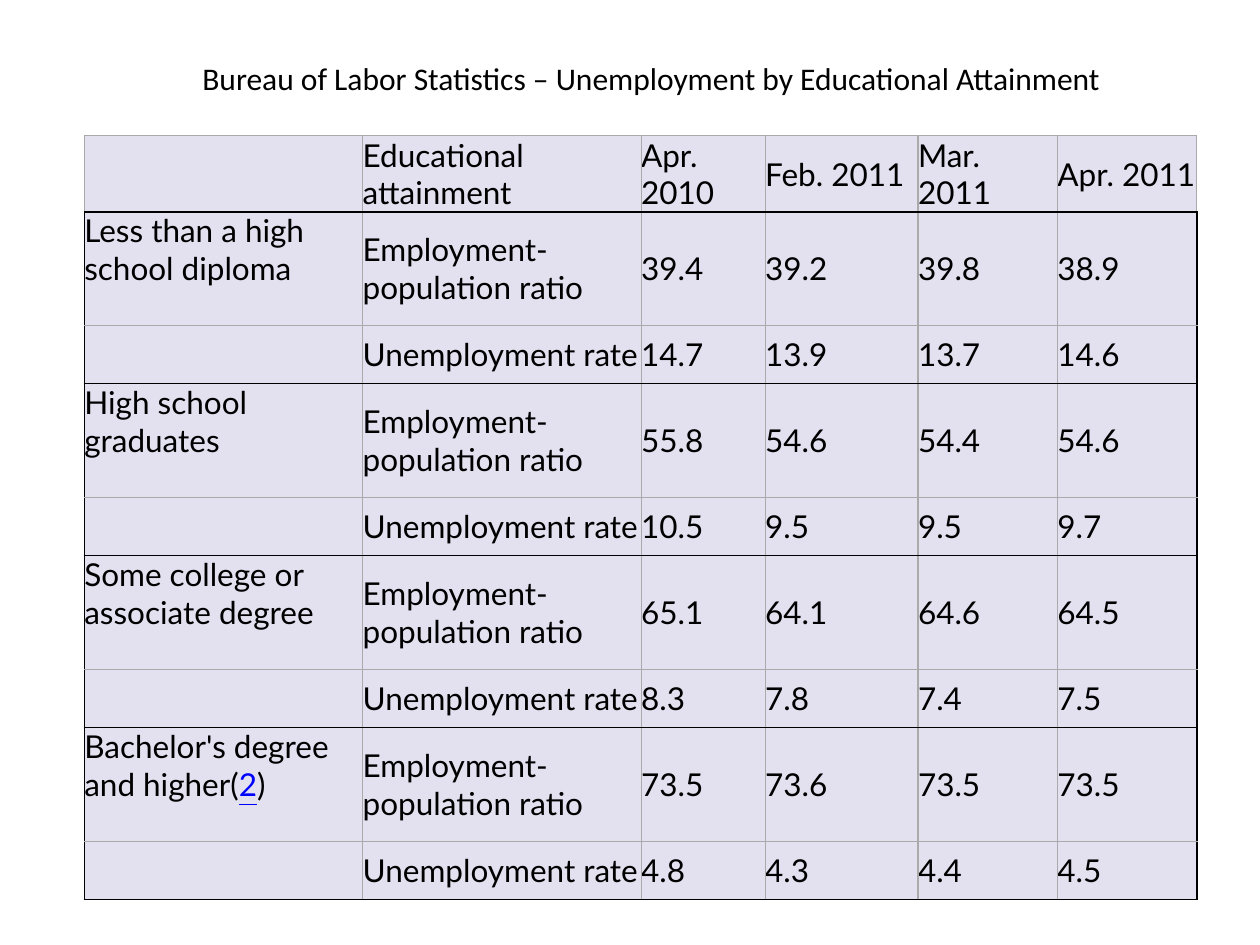
import lxml.etree
import pptx
import pptx.dml.color
import pptx.enum.text
import pptx.oxml.ns
import pptx.util

TITLE = "Bureau of Labor Statistics – Unemployment by Educational Attainment"
HEADINGS = ["", "Educational attainment", "Apr. 2010", "Feb. 2011", "Mar. 2011", "Apr. 2011"]
MEASURES = ["Employment-population ratio", "Unemployment rate"]
GROUPS = [
    ("Less than a high school diploma",
     [["39.4", "39.2", "39.8", "38.9"], ["14.7", "13.9", "13.7", "14.6"]]),
    ("High school graduates",
     [["55.8", "54.6", "54.4", "54.6"], ["10.5", "9.5", "9.5", "9.7"]]),
    ("Some college or associate degree",
     [["65.1", "64.1", "64.6", "64.5"], ["8.3", "7.8", "7.4", "7.5"]]),
    ("Bachelor's degree and higher(",
     [["73.5", "73.6", "73.5", "73.5"], ["4.8", "4.3", "4.4", "4.5"]]),
]
COLUMN_SHARES = [5.61, 5.61, 2.5, 3.08, 2.81, 2.81]
ROW_SHARES = [1.53] + [2.29, 1.18] * len(GROUPS)
GRID_LINE = ("AAAAAA", 0.75)
GROUP_LINE = ("000000", 1)


def color(hex_string):
    """Return the colour for a hex string."""
    return pptx.dml.color.RGBColor.from_string(hex_string)


def format_run(run, font_name, hex_string="000000", underline=False):
    """Give a run its font, size and colour."""
    run.font.name = font_name
    run.font.size = pptx.util.Pt(18)
    run.font.color.rgb = color(hex_string)
    if underline:
        run.font.underline = True


def set_borders(cell, borders):
    """Draw the left, right, top and bottom borders of a cell."""
    properties = cell._tc.get_or_add_tcPr()
    for index, (side, (hex_string, points)) in enumerate(zip("LRTB", borders)):
        line = lxml.etree.Element(pptx.oxml.ns.qn("a:ln" + side), w=str(pptx.util.Pt(points)))
        fill = lxml.etree.SubElement(line, pptx.oxml.ns.qn("a:solidFill"))
        lxml.etree.SubElement(fill, pptx.oxml.ns.qn("a:srgbClr"), val=hex_string)
        properties.insert(index, line)


def cell_borders(row, column):
    """Frame each group of two rows in black and the rest in grey."""
    in_group = row > 0
    is_black = [
        in_group and column == 0,
        in_group and column == len(HEADINGS) - 1,
        row % 2 == 1,
        row % 2 == 0,
    ]
    return [GROUP_LINE if black else GRID_LINE for black in is_black]


def fill_cell(cell, text, row, column):
    """Write one table cell with its fill, borders and text format."""
    cell.margin_left = cell.margin_right = cell.margin_top = cell.margin_bottom = 0
    is_category = column == 0 and row > 0
    anchors = pptx.enum.text.MSO_ANCHOR
    cell.vertical_anchor = anchors.TOP if is_category else anchors.MIDDLE
    cell.fill.solid()
    cell.fill.fore_color.rgb = color("E3E0EF")
    set_borders(cell, cell_borders(row, column))
    cell.text_frame.text = text
    for run in cell.text_frame.paragraphs[0].runs:
        format_run(run, "Lato")


def add_footnote_mark(cell):
    """Finish a category label with its underlined footnote number."""
    paragraph = cell.text_frame.paragraphs[0]
    for text, hex_string, underline in [("2", "0000FF", True), (")", "000000", False)]:
        run = paragraph.add_run()
        run.text = text
        format_run(run, "Lato", hex_string, underline)


def table_rows():
    """Return the texts of all table rows."""
    rows = [HEADINGS]
    for category, series in GROUPS:
        for label, measure, values in zip([category, ""], MEASURES, series):
            rows.append([label, measure, *values])
    return rows


def add_unemployment_table(slide, left, top, width, height):
    """Place the table in the given box."""
    rows = table_rows()
    table = slide.shapes.add_table(len(rows), len(HEADINGS), left, top, width, height).table
    table.first_row = table.horz_banding = False
    for column, share in zip(table.columns, COLUMN_SHARES):
        column.width = int(width * share / sum(COLUMN_SHARES))
    for row, share in zip(table.rows, ROW_SHARES):
        row.height = int(height * share / sum(ROW_SHARES))
    for row_index, texts in enumerate(rows):
        for column_index, text in enumerate(texts):
            fill_cell(table.cell(row_index, column_index), text, row_index, column_index)
    add_footnote_mark(table.cell(len(rows) - 2, 0))


def set_title(slide, left, top, width, height):
    """Place the slide title in the given box."""
    title = slide.shapes.title
    title.left, title.top, title.width, title.height = left, top, width, height
    title.text_frame.text = TITLE
    title.text_frame.word_wrap = True
    title.text_frame.vertical_anchor = pptx.enum.text.MSO_ANCHOR.TOP
    paragraph = title.text_frame.paragraphs[0]
    paragraph.alignment = pptx.enum.text.PP_ALIGN.CENTER
    format_run(paragraph.runs[0], "Calibri")


def main():
    """Build the presentation and save it."""
    cm = pptx.util.Cm
    presentation = pptx.Presentation()
    presentation.slide_width = cm(25.4)
    presentation.slide_height = cm(19.05)
    slide = presentation.slides.add_slide(presentation.slide_layouts[5])
    add_unemployment_table(slide, cm(1.7), cm(2.74), cm(22.43), cm(15.4))
    set_title(slide, cm(2.97), cm(1.07), cm(20.32), cm(1.02))
    presentation.save("out.pptx")


if __name__ == "__main__":
    main()
